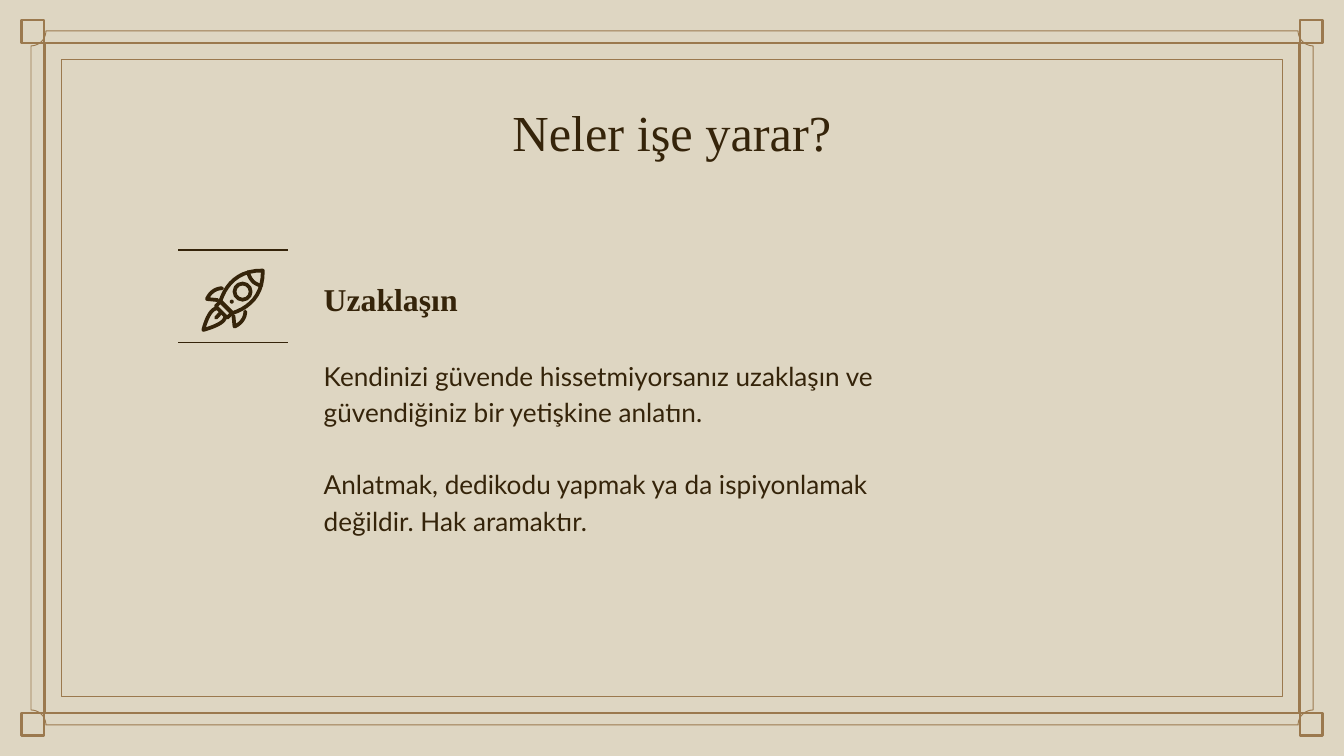
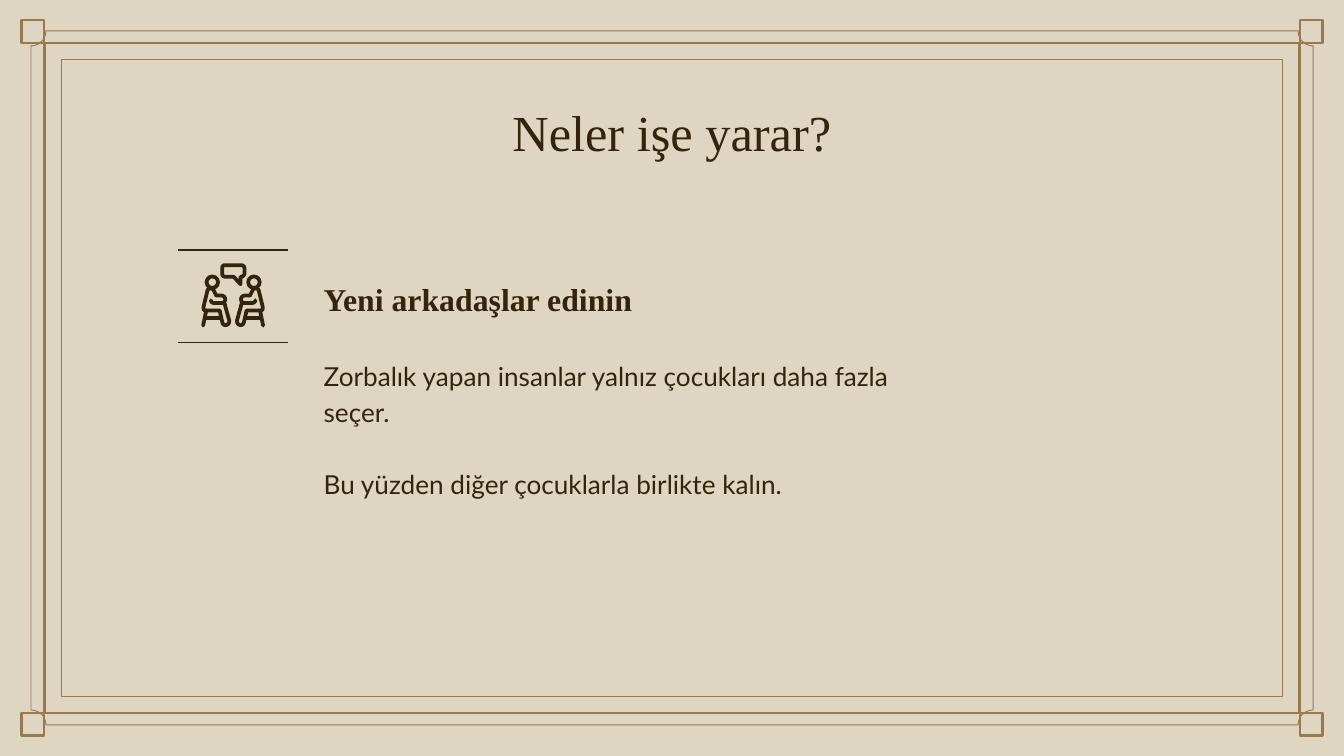
from lxml import etree
from pptx import Presentation
from pptx.dml.color import RGBColor
from pptx.enum import shapes, text
from pptx.oxml.ns import qn
from pptx.util import Pt

# Content
TITLE = "Neler işe yarar?"
SLIDES = [
    {
        "heading": "Uzaklaşın",
        "heading_width": 155.5,
        "body": [
            "Kendinizi güvende hissetmiyorsanız uzaklaşın ve güvendiğiniz bir yetişkine anlatın.",
            "Anlatmak, dedikodu yapmak ya da ispiyonlamak değildir. Hak aramaktır.",
        ],
        "icon": "rocket",
    },
    {
        "heading": "Yeni arkadaşlar edinin",
        "heading_width": 242,
        "body": [
            "Zorbalık yapan insanlar yalnız çocukları daha fazla seçer.",
            "Bu yüzden diğer çocuklarla birlikte kalın.",
        ],
        "icon": "friends",
    },
]

# Icon outlines on a 47-unit grid: a start point, then lines (x, y)
# or curves (control 1, control 2, end)
ICON_SIZE = 47
ROCKET = [
    # Body, base plate and nose
    [(14, 24), (18, 12, 27, 1, 45.5, 1.3), (46, 20, 35, 29, 23, 33), (14, 24)],
    [(14, 24.5), (22.5, 33), (19, 36.5), (10.5, 28), (14, 24.5)],
    [(34.5, 2.5), (36, 8, 39, 11.5, 44.5, 12.5)],
    # Fins
    [(15.3, 14.5), (10, 14.5, 6, 18, 4, 22.5), (12, 23.3)],
    [(32.5, 31.7), (32.5, 37, 29, 41, 24.5, 43), (23.7, 35)],
    # Flame
    [(11, 29.5), (7, 30, 3.5, 37, 1.3, 45.5), (10, 43, 17, 40, 17.5, 36)],
    [(14, 33), (10.7, 36.5)],
]
PERSON = [
    # Back, legs and arm
    [(4.5, 16), (1.7, 27.5), (1, 31, 2, 31, 4, 31), (13.5, 31), (15.5, 40),
     (16.5, 43.5, 21.5, 42, 20.5, 38), (17.7, 28),
     (17.5, 26, 17, 25.5, 15, 25.5), (9.5, 25.5), (8, 25.5, 7, 24.5, 7, 23.5)],
    [(4.5, 16), (5, 14.5, 8, 14, 9, 16), (11, 20), (15, 20),
     (18.5, 20, 18.5, 25.5, 15, 25.5)],
    # Chair
    [(3.5, 31), (1.2, 42.3)],
    [(3.3, 36.5), (13.5, 36.5)],
]
BUBBLE = [
    [(18, -2.7), (29, -2.7), (32, -2.7, 32, -0.5, 32, 0), (32, 3),
     (32, 5.5, 30, 6, 29, 6), (29, 11.5), (24, 6), (18, 6),
     (15.3, 6, 15.3, 4, 15.3, 3), (15.3, 0), (15.3, -2.7, 17, -2.7, 18, -2.7)],
]


def mirrored(outlines):
    return [[tuple(ICON_SIZE - value if index % 2 == 0 else value
                   for index, value in enumerate(segment))
             for segment in outline] for outline in outlines]


# Each icon: outlines per part, then rings (centre x, centre y, radius) and dots
ICONS = {
    "rocket": {"parts": [ROCKET], "rings": [(30.5, 17, 6)], "dots": [(22.5, 24.5, 1.5)]},
    "friends": {"parts": [PERSON, mirrored(PERSON), BUBBLE],
                "rings": [(8, 10, 4.3), (ICON_SIZE - 8, 10, 4.3)], "dots": []},
}

# Shared look
WIDTH, HEIGHT = 720, 405
SAND = RGBColor(0xDE, 0xD6, 0xC2)
BRONZE = RGBColor(0x9B, 0x79, 0x4E)
BROWN = RGBColor(0x35, 0x24, 0x0A)
SERIF, SANS = "Times New Roman", "Lato"
THICK, THIN, ICON_LINE, DIVIDER_LINE = 1.28, 0.5, 2, 0.75
ICON_LEFT, ICON_TOP, ICON_UNIT = 108, 144, 0.72
DIVIDER_LEFT, DIVIDER_RIGHT, DIVIDER_TOPS = 95.5, 154.3, (134, 183.5)
TEXT_LEFT = 166.3
TITLE_FONT = {"name": SERIF, "size": Pt(27)}
HEADING_FONT = {"name": SERIF, "size": Pt(17), "bold": True}
BODY_FONT = {"name": SANS, "size": Pt(14)}


def style(shape, line=None, weight=THIN, fill=None):
    shape.shadow.inherit = False
    if fill is None:
        shape.fill.background()
    else:
        shape.fill.solid()
        shape.fill.fore_color.rgb = fill
    if line is None:
        shape.line.fill.background()
    else:
        shape.line.color.rgb = line
        shape.line.width = Pt(weight)


def add_preset(slide, kind, left, top, width, height, **look):
    shape = slide.shapes.add_shape(kind, Pt(left), Pt(top), Pt(width), Pt(height))
    style(shape, **look)


def flatten(outline, steps=10):
    """Turn lines and cubic curves into a list of points."""
    points = [outline[0]]
    for segment in outline[1:]:
        if len(segment) == 2:
            points.append(segment)
            continue
        corners = [points[-1], segment[:2], segment[2:4], segment[4:]]
        for step in range(1, steps + 1):
            t = step / steps
            weights = ((1 - t) ** 3, 3 * t * (1 - t) ** 2, 3 * t * t * (1 - t), t ** 3)
            points.append(tuple(sum(w * corner[axis] for w, corner in zip(weights, corners))
                                for axis in (0, 1)))
    return points


def add_outlines(slide, outlines, left=0, top=0, unit=1, **look):
    builder = None
    for outline in outlines:
        points = [(Pt(left + x * unit), Pt(top + y * unit)) for x, y in flatten(outline)]
        if builder is None:
            builder = slide.shapes.build_freeform(*points[0], scale=1.0)
        else:
            builder.move_to(*points[0])
        builder.add_line_segments(points[1:], close=outline[0] == outline[-1][-2:])
    shape = builder.convert_to_shape()
    style(shape, **look)
    return shape


def add_frame(slide):
    box = shapes.MSO_SHAPE.RECTANGLE
    # Corner squares
    left, top, side = 11.5, 10.8, 12.2
    for x in (left, WIDTH - left - side):
        for y in (top, HEIGHT - top - side):
            add_preset(slide, box, x, y, side, side, line=BRONZE, weight=THICK)
    # Nested borders
    for x, y, weight in ((23.8, 23, THICK), (33.1, 31.7, THIN)):
        add_preset(slide, box, x, y, WIDTH - 2 * x, HEIGHT - 2 * y,
                   line=BRONZE, weight=weight)
    # Border with scooped corners
    edge, scoop, bend = 16.6, 8, 4.4
    right, bottom = WIDTH - edge, HEIGHT - edge
    start = (right - scoop, bottom)
    border = [
        start, (edge + scoop, bottom),
        (edge + scoop, bottom - bend, edge + bend, bottom - scoop, edge, bottom - scoop),
        (edge, edge + scoop),
        (edge + bend, edge + scoop, edge + scoop, edge + bend, edge + scoop, edge),
        (right - scoop, edge),
        (right - scoop, edge + bend, right - bend, edge + scoop, right, edge + scoop),
        (right, bottom - scoop),
        (right - bend, bottom - scoop, right - scoop, bottom - bend, *start),
    ]
    add_outlines(slide, [border], line=BRONZE, weight=THIN)


def add_text(slide, box, lines, font, anchor=text.MSO_ANCHOR.TOP,
             align=text.PP_ALIGN.LEFT, spacing=1.0, gap=0):
    frame = slide.shapes.add_textbox(*map(Pt, box)).text_frame
    margins = {f"margin_{side}": Pt(7.2) for side in ("left", "top", "right", "bottom")}
    for name, value in {"word_wrap": True, "vertical_anchor": anchor, **margins}.items():
        setattr(frame, name, value)
    for index, line in enumerate(lines):
        paragraph = frame.add_paragraph() if index else frame.paragraphs[0]
        paragraph.alignment = align
        paragraph.line_spacing = spacing
        if index:
            paragraph.space_before = Pt(gap)
        run = paragraph.add_run()
        run.text = line
        for name, value in font.items():
            setattr(run.font, name, value)
        run.font.color.rgb = BROWN


def add_divider(slide, top):
    line = slide.shapes.add_connector(shapes.MSO_CONNECTOR.STRAIGHT, Pt(DIVIDER_LEFT),
                                      Pt(top), Pt(DIVIDER_RIGHT), Pt(top))
    line.line.color.rgb = BROWN
    line.line.width = Pt(DIVIDER_LINE)
    etree.SubElement(line._element.spPr, qn("a:effectLst"))


def add_icon(slide, icon):
    for outlines in icon["parts"]:
        shape = add_outlines(slide, outlines, ICON_LEFT, ICON_TOP, ICON_UNIT,
                             line=BROWN, weight=ICON_LINE)
        # Rounded ends and joins
        stroke = shape._element.spPr.find(qn("a:ln"))
        stroke.set("cap", "rnd")
        etree.SubElement(stroke, qn("a:round"))
    looks = {"rings": {"line": BROWN, "weight": ICON_LINE}, "dots": {"fill": BROWN}}
    for kind, look in looks.items():
        for x, y, radius in icon[kind]:
            size = 2 * radius * ICON_UNIT
            add_preset(slide, shapes.MSO_SHAPE.OVAL, ICON_LEFT + (x - radius) * ICON_UNIT,
                       ICON_TOP + (y - radius) * ICON_UNIT, size, size, **look)


def main():
    presentation = Presentation()
    presentation.slide_width, presentation.slide_height = Pt(WIDTH), Pt(HEIGHT)
    background = presentation.slide_master.background.fill
    background.solid()
    background.fore_color.rgb = SAND

    for content in SLIDES:
        slide = presentation.slides.add_slide(presentation.slide_layouts[6])
        add_frame(slide)
        add_text(slide, (56.7, 46.8, 606.6, 45.4), [TITLE], TITLE_FONT,
                 align=text.PP_ALIGN.CENTER)
        add_text(slide, (TEXT_LEFT, 183.6, 332.6, 119.5), content["body"], BODY_FONT,
                 spacing=1.15, gap=19.3)
        add_text(slide, (TEXT_LEFT, 142.6, content["heading_width"], 34.6),
                 [content["heading"]], HEADING_FONT,
                 anchor=text.MSO_ANCHOR.BOTTOM, spacing=1.15)
        for top in DIVIDER_TOPS:
            add_divider(slide, top)
        add_icon(slide, ICONS[content["icon"]])

    presentation.save("out.pptx")


if __name__ == "__main__":
    main()
